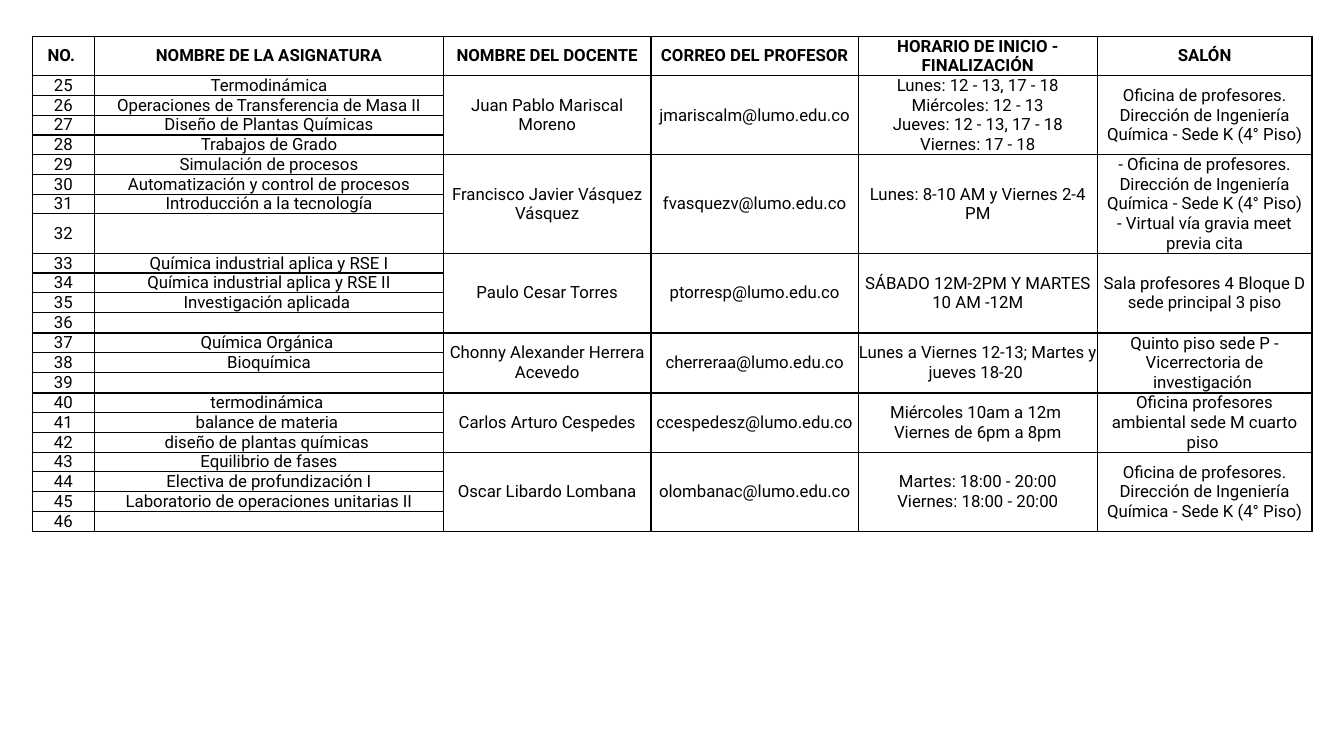
from dataclasses import dataclass
from itertools import accumulate

from lxml.etree import SubElement
from pptx import Presentation
from pptx.dml.color import RGBColor
from pptx.enum.text import MSO_ANCHOR, PP_ALIGN
from pptx.oxml.ns import qn
from pptx.table import Table, _Cell
from pptx.util import Pt


@dataclass(frozen=True)
class Theme:
    font: str = "Roboto"
    ink: str = "000000"
    text_size: int = 12
    border_width: int = 1
    line_height: float = 14.1


@dataclass(frozen=True)
class Teacher:
    courses: tuple[str, ...]
    name: str
    email: str
    schedule: str
    room: str


THEME = Theme()
FIRST_NUMBER = 25
TALL_NUMBER = 32
COLUMN_WIDTHS = (44.6, 249.2, 148.2, 148.2, 170.6, 153.4)
HEADINGS = (
    "NO. ",
    "NOMBRE DE LA ASIGNATURA",
    "NOMBRE DEL DOCENTE",
    "CORREO DEL PROFESOR",
    "HORARIO DE INICIO - FINALIZACIÓN",
    "SALÓN",
)
CHEMISTRY_OFFICE = "Oficina de profesores. Dirección de Ingeniería Química - Sede K (4° Piso)"
TEACHERS = (
    Teacher(
        ("Termodinámica", "Operaciones de Transferencia de Masa II",
         "Diseño de Plantas Químicas", "Trabajos de Grado"),
        "Juan Pablo Mariscal Moreno",
        "jmariscalm@lumo.edu.co",
        "Lunes: 12 - 13, 17 - 18\nMiércoles: 12 - 13\nJueves: 12 - 13, 17 - 18\nViernes: 17 - 18",
        CHEMISTRY_OFFICE,
    ),
    Teacher(
        ("Simulación de procesos", "Automatización y control de procesos",
         "Introducción a la tecnología", ""),
        "Francisco Javier Vásquez Vásquez",
        "fvasquezv@lumo.edu.co",
        "Lunes: 8-10 AM y Viernes 2-4 PM",
        f"- {CHEMISTRY_OFFICE}\n- Virtual vía gravia meet previa cita",
    ),
    Teacher(
        ("Química industrial aplica y RSE I", "Química industrial aplica y RSE II",
         "Investigación aplicada ", ""),
        "Paulo Cesar Torres",
        "ptorresp@lumo.edu.co",
        "SÁBADO 12M-2PM Y MARTES 10 AM -12M",
        "Sala profesores 4 Bloque D sede principal 3 piso",
    ),
    Teacher(
        ("Química Orgánica ", "Bioquímica", ""),
        "Chonny Alexander Herrera Acevedo",
        "cherreraa@lumo.edu.co",
        "Lunes a Viernes 12-13; Martes y jueves 18-20 ",
        "Quinto piso sede P - Vicerrectoria de investigación ",
    ),
    Teacher(
        ("termodinámica ", "balance de materia ", "diseño de plantas químicas "),
        "Carlos Arturo Cespedes",
        "ccespedesz@lumo.edu.co",
        "Miércoles 10am a 12m \nViernes de 6pm a 8pm",
        "Oficina profesores ambiental sede M cuarto piso ",
    ),
    Teacher(
        ("Equilibrio de fases", "Electiva de profundización I",
         "Laboratorio de operaciones unitarias II", ""),
        "Oscar Libardo Lombana",
        "olombanac@lumo.edu.co",
        "Martes: 18:00 - 20:00\nViernes: 18:00 - 20:00",
        CHEMISTRY_OFFICE,
    ),
)


def format_cell(cell: _Cell) -> None:
    cell.margin_left = cell.margin_right = cell.margin_top = cell.margin_bottom = Pt(0)
    cell.vertical_anchor = MSO_ANCHOR.MIDDLE
    properties = cell._tc.get_or_add_tcPr()
    for side in ("a:lnL", "a:lnR", "a:lnT", "a:lnB"):
        border = SubElement(properties, qn(side), w=str(Pt(THEME.border_width)))
        SubElement(SubElement(border, qn("a:solidFill")), qn("a:srgbClr"), val=THEME.ink)
    cell.fill.background()
    para = cell.text_frame.paragraphs[0]
    para.alignment = PP_ALIGN.CENTER
    SubElement(para._p, qn("a:endParaRPr"), sz=str(THEME.text_size * 100))


def write_cell(cell: _Cell, text: str, bold: bool = False) -> None:
    if not text:
        return
    para = cell.text_frame.paragraphs[0]
    for position, line in enumerate(text.split("\n")):
        if position:
            para.add_line_break()
        span = para.add_run()
        span.text = line
        span.font.name = THEME.font
        span.font.size = Pt(THEME.text_size)
        span.font.bold = bold
        span.font.color.rgb = RGBColor.from_string(THEME.ink)


def write_teacher(table: Table, first_row: int, teacher: Teacher) -> None:
    for row, course in enumerate(teacher.courses, first_row):
        write_cell(table.cell(row, 0), str(FIRST_NUMBER + row - 1))
        write_cell(table.cell(row, 1), course)
    last_row = first_row + len(teacher.courses) - 1
    details = (teacher.name, teacher.email, teacher.schedule, teacher.room)
    for column, detail in enumerate(details, 2):
        cell = table.cell(first_row, column)
        cell.merge(table.cell(last_row, column))
        write_cell(cell, detail)


def main() -> None:
    deck = Presentation()
    deck.slide_width, deck.slide_height = Pt(960), Pt(540)
    page = deck.slides.add_slide(deck.slide_layouts[6])

    first_rows = list(accumulate((len(teacher.courses) for teacher in TEACHERS), initial=1))
    row_count = first_rows[-1]
    tall_rows = (0, TALL_NUMBER - FIRST_NUMBER + 1)
    table = page.shapes.add_table(
        row_count, len(COLUMN_WIDTHS), Pt(23), Pt(26), Pt(sum(COLUMN_WIDTHS)),
        Pt((row_count + len(tall_rows)) * THEME.line_height),
    ).table
    table.first_row = table.horz_banding = False
    for column, width in zip(table.columns, COLUMN_WIDTHS):
        column.width = Pt(width)
    for index, row in enumerate(table.rows):
        row.height = Pt(THEME.line_height * (2 if index in tall_rows else 1))
    for cell in table.iter_cells():
        format_cell(cell)

    for column, heading in enumerate(HEADINGS):
        write_cell(table.cell(0, column), heading, bold=True)
    for first_row, teacher in zip(first_rows, TEACHERS):
        write_teacher(table, first_row, teacher)
    deck.save("out.pptx")


if __name__ == "__main__":
    main()
